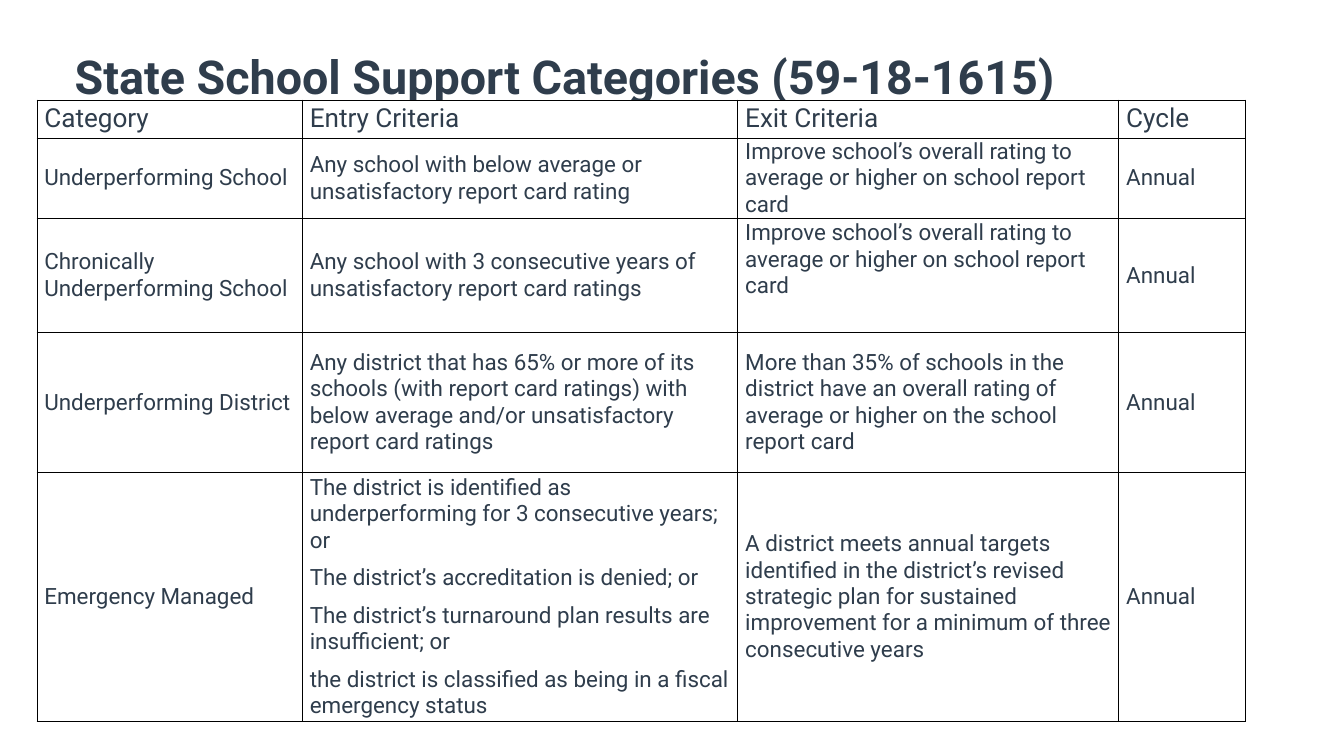
from lxml import etree
from pptx import Presentation
from pptx.dml.color import RGBColor
from pptx.enum.text import MSO_ANCHOR
from pptx.oxml.ns import qn
from pptx.util import Pt

MIDDLE = MSO_ANCHOR.MIDDLE
TOP = MSO_ANCHOR.TOP
FONT = "Roboto"
INK = "2F3D4C"
WHITE = "FFFFFF"
BLACK = "000000"

TITLE = "State School Support Categories (59-18-1615)"
HEADERS = ["Category", "Entry Criteria", "Exit Criteria", "Cycle"]
IMPROVE = "Improve school’s overall rating to average or higher on school report card"
CATEGORIES = [
    ("Underperforming School",
     "Any school with below average or unsatisfactory report card rating",
     IMPROVE, "Annual"),
    ("Chronically Underperforming School",
     "Any school with 3 consecutive years of unsatisfactory report card ratings",
     IMPROVE, "Annual"),
    ("Underperforming District",
     "Any district that has 65% or more of its schools (with report card ratings) "
     "with below average and/or unsatisfactory report card ratings",
     "More than 35% of schools in the district have an overall rating of average "
     "or higher on the school report card", "Annual"),
    ("Emergency Managed",
     "The district is identified as underperforming for 3 consecutive years; or\n"
     "The district’s accreditation is denied; or\n"
     "The district’s turnaround plan results are insufficient; or\n"
     "the district is classified as being in a fiscal emergency status",
     "A district meets annual targets identified in the district’s revised strategic "
     "plan for sustained improvement for a minimum of three consecutive years", "Annual"),
]
COLUMN_WIDTHS = [284.4, 466.56, 408.24, 136.08]
ROW_HEIGHTS = [40.5, 84, 121.68, 150.48, 262]
TABLE_LEFT, TABLE_TOP = 39.6, 107.28
CELL_INSET = 7.92
RAISED_CELL = (2, 2)
RAISE = 34


def color(value):
    return RGBColor.from_string(value)


def write(text_frame, text, *, size, bold=False, spacing=0):
    for index, line in enumerate(text.split("\n")):
        paragraph = text_frame.add_paragraph() if index else text_frame.paragraphs[0]
        paragraph.space_before = paragraph.space_after = Pt(spacing)
        run = paragraph.add_run()
        run.text = line
        run.font.name = FONT
        run.font.size = Pt(size)
        run.font.bold = bold
        run.font.color.rgb = color(INK)


def add_borders(cell):
    properties = cell._tc.get_or_add_tcPr()
    for position, side in enumerate(("a:lnL", "a:lnR", "a:lnT", "a:lnB")):
        line = etree.Element(qn(side), w=str(Pt(1)))
        fill = etree.SubElement(line, qn("a:solidFill"))
        etree.SubElement(fill, qn("a:srgbClr"), val=BLACK)
        properties.insert(position, line)


def add_title(slide):
    box = slide.shapes.add_textbox(Pt(72), Pt(43.2), Pt(1295.28), Pt(86.4))
    frame = box.text_frame
    frame.word_wrap = True
    frame.vertical_anchor = TOP
    frame.margin_left = frame.margin_right = frame.margin_top = frame.margin_bottom = Pt(8)
    write(frame, TITLE, size=50, bold=True)


def add_category_table(slide):
    rows = [HEADERS, *CATEGORIES]
    table = slide.shapes.add_table(
        len(rows), len(HEADERS), Pt(TABLE_LEFT), Pt(TABLE_TOP),
        Pt(sum(COLUMN_WIDTHS)), Pt(sum(ROW_HEIGHTS))).table
    table.first_row = table.horz_banding = False
    for column, width in zip(table.columns, COLUMN_WIDTHS):
        column.width = Pt(width)
    for row, height in zip(table.rows, ROW_HEIGHTS):
        row.height = Pt(height)
    for row_index, texts in enumerate(rows):
        for column_index, text in enumerate(texts):
            cell = table.cell(row_index, column_index)
            cell.fill.solid()
            cell.fill.fore_color.rgb = color(WHITE)
            cell.vertical_anchor = MIDDLE
            cell.margin_left = cell.margin_right = Pt(CELL_INSET)
            cell.margin_top = 0
            cell.margin_bottom = Pt(RAISE if (row_index, column_index) == RAISED_CELL else 0)
            add_borders(cell)
            write(cell.text_frame, text, size=24 if row_index else 28,
                  spacing=6 if row_index else 0)


def main():
    presentation = Presentation()
    presentation.slide_width = Pt(1440)
    presentation.slide_height = Pt(810)
    slide = presentation.slides.add_slide(presentation.slide_layouts[6])
    add_title(slide)
    add_category_table(slide)
    presentation.save("out.pptx")


if __name__ == "__main__":
    main()
